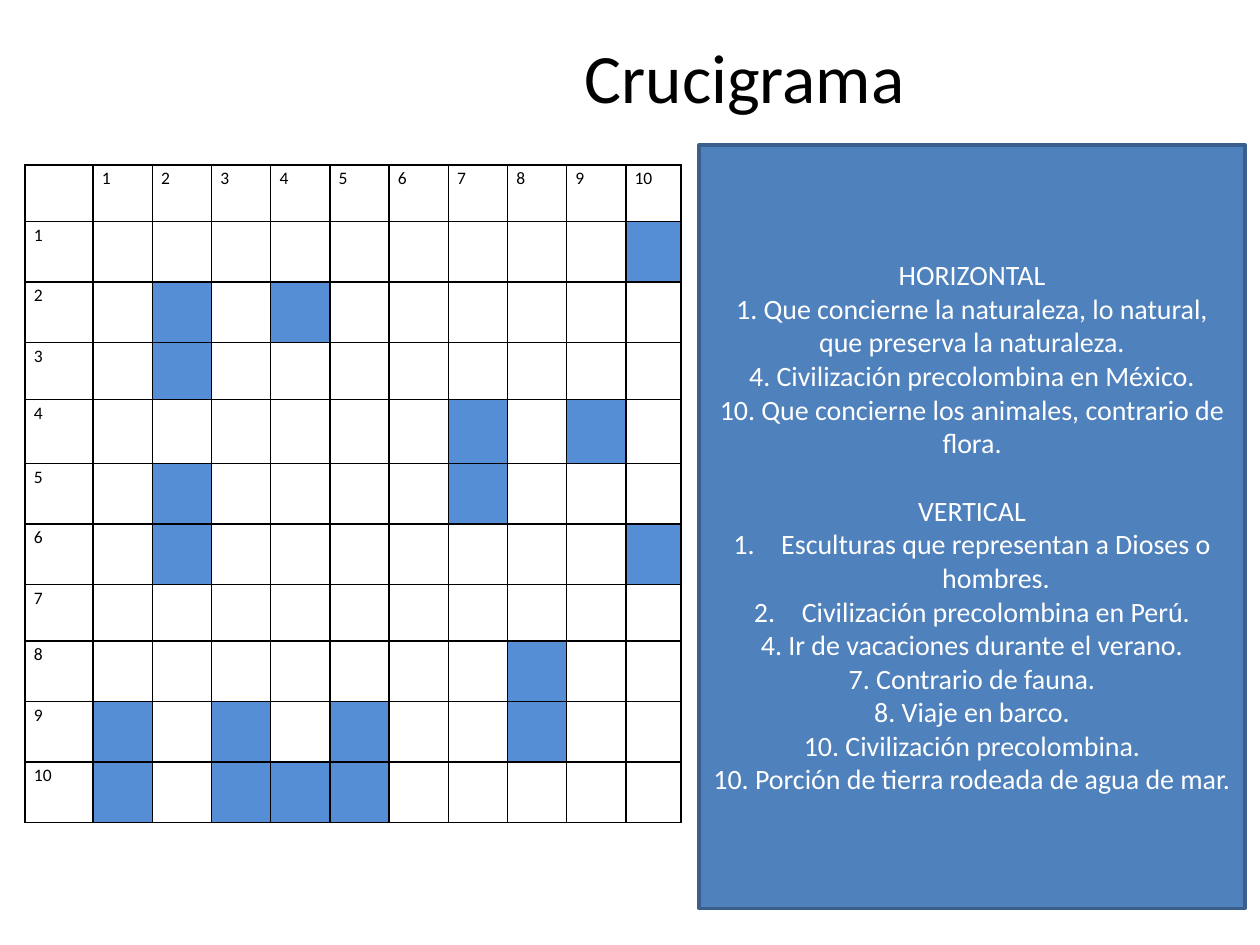
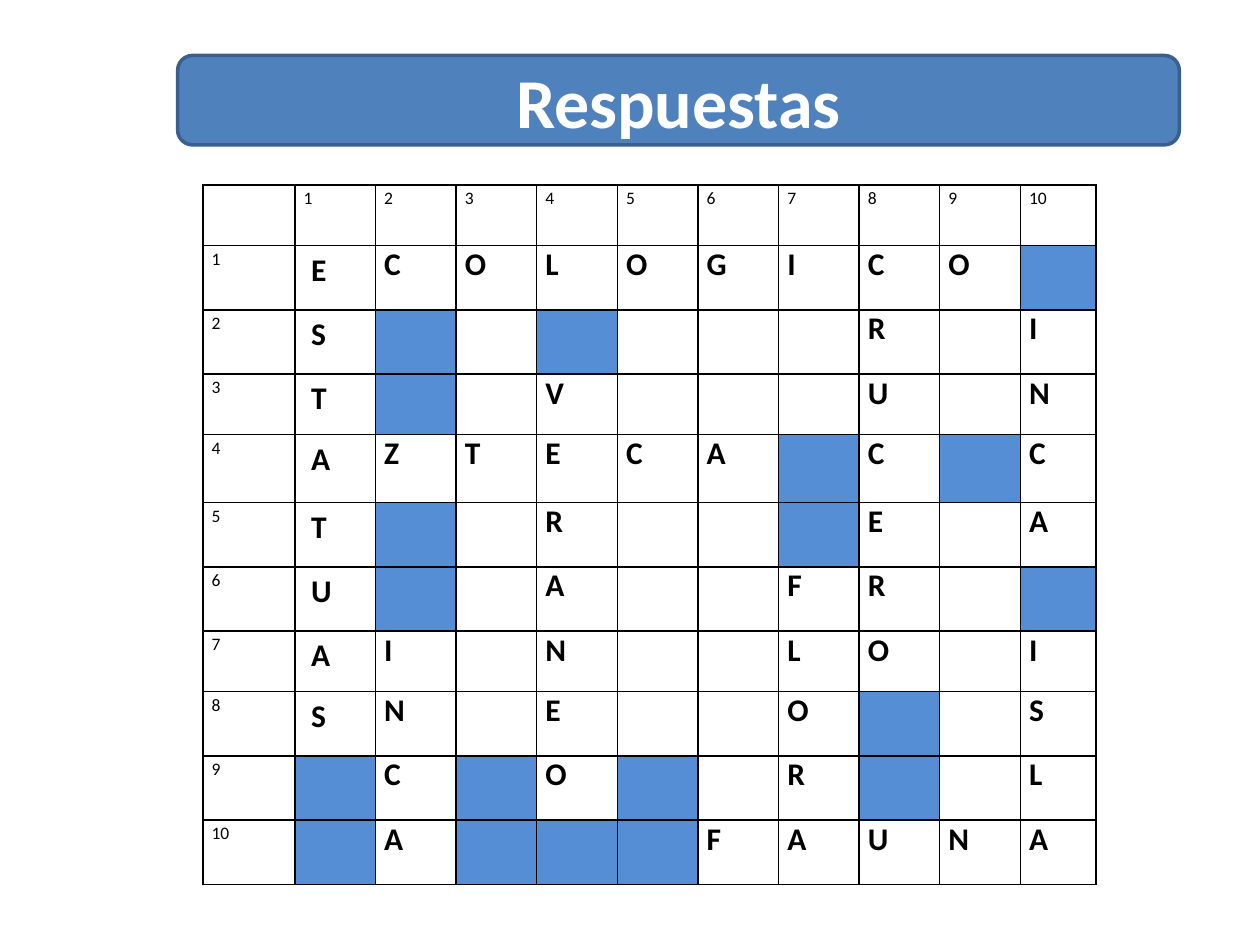
import dataclasses

import lxml.etree
import pptx
import pptx.dml.color
import pptx.enum.shapes
import pptx.enum.text
import pptx.oxml.ns
import pptx.util

Inches = pptx.util.Inches


@dataclasses.dataclass(frozen=True)
class Theme:
    font: str = "Calibri"
    ink: str = "000000"
    paper: str = "FFFFFF"
    panel: str = "4F81BD"
    outline: str = "3A5F8C"
    block: str = "558ED5"
    title_size: float = 39.6
    banner_size: float = 40
    clue_size: float = 16
    letter_size: float = 18
    number_size: float = 10
    outline_width: float = 2
    grid_width: float = 1


BLOCK = "#"
EMPTY = "."
ANSWERS = [
    "ECOLOGICO#",
    "S#.#...R.I",
    "T#.V...U.N",
    "AZTECA#C#C",
    "T#.R..#E.A",
    "U#.A..FR.#",
    "AI.N..LO.I",
    "SN.E..O#.S",
    "#C#O#.R#.L",
    "#A###FAUNA",
]
ROW_OFFSETS = [-0.03, 0, 0, -0.03, 0.03, 0, 0, -0.03, 0, 0, 0]
HORIZONTAL_CLUES = [
    "1. Que concierne la naturaleza, lo natural, que preserva la naturaleza.",
    "4. Civilización precolombina en México.",
    "10. Que concierne los animales, contrario de flora.",
]
NUMBERED_CLUES = [
    "Esculturas que representan a Dioses o hombres.",
    "Civilización precolombina en Perú.",
]
VERTICAL_CLUES = [
    "4. Ir de vacaciones durante el verano.",
    "7. Contrario de fauna.",
    "8. Viaje en barco.",
    "10. Civilización precolombina.",
    "10. Porción de tierra rodeada de agua de mar.",
]


class CrosswordDeck:
    """Hold the theme and the current slide, and draw each kind of element."""

    def __init__(self, theme):
        self.theme = theme
        self.presentation = pptx.Presentation()
        self.presentation.slide_width = Inches(10)
        self.presentation.slide_height = Inches(7.5)
        self.slide = None

    def add_slide(self):
        self.slide = self.presentation.slides.add_slide(self.presentation.slide_layouts[6])

    def color(self, value):
        return pptx.dml.color.RGBColor.from_string(value)

    def fill(self, target, value):
        target.fill.solid()
        target.fill.fore_color.rgb = self.color(value)

    def add_text(self, paragraph, text, size, color, bold=False):
        run = paragraph.add_run()
        run.text = text
        run.font.name = self.theme.font
        run.font.size = pptx.util.Pt(size)
        run.font.bold = bold
        run.font.color.rgb = self.color(color)

    def centered_paragraph(self, frame, first=False):
        paragraph = frame.paragraphs[0] if first else frame.add_paragraph()
        paragraph.alignment = pptx.enum.text.PP_ALIGN.CENTER
        return paragraph

    def prepare_frame(self, shape):
        frame = shape.text_frame
        frame.word_wrap = True
        frame.vertical_anchor = pptx.enum.text.MSO_ANCHOR.MIDDLE
        return frame

    def title(self, text, left, top, width, height):
        box = self.slide.shapes.add_textbox(Inches(left), Inches(top), Inches(width), Inches(height))
        paragraph = self.centered_paragraph(self.prepare_frame(box), first=True)
        self.add_text(paragraph, text, self.theme.title_size, self.theme.ink)

    def panel(self, kind, left, top, width, height):
        shape = self.slide.shapes.add_shape(
            kind, Inches(left), Inches(top), Inches(width), Inches(height))
        shape.shadow.inherit = False
        self.fill(shape, self.theme.panel)
        shape.line.color.rgb = self.color(self.theme.outline)
        shape.line.width = pptx.util.Pt(self.theme.outline_width)
        return self.prepare_frame(shape)

    def banner(self, text, left, top, width, height):
        frame = self.panel(pptx.enum.shapes.MSO_SHAPE.ROUNDED_RECTANGLE, left, top, width, height)
        paragraph = self.centered_paragraph(frame, first=True)
        self.add_text(paragraph, text, self.theme.banner_size, self.theme.paper, bold=True)

    def hang(self, paragraph, numbered):
        properties = paragraph._p.get_or_add_pPr()
        properties.set("marL", str(Inches(0.38)))
        properties.set("indent", str(-Inches(0.38)))
        if numbered:
            font = lxml.etree.SubElement(properties, pptx.oxml.ns.qn("a:buFont"))
            font.set("typeface", "+mj-lt")
            number = lxml.etree.SubElement(properties, pptx.oxml.ns.qn("a:buAutoNum"))
            number.set("type", "arabicPeriod")

    def clues(self, left, top, width, height):
        size, color = self.theme.clue_size, self.theme.paper
        frame = self.panel(pptx.enum.shapes.MSO_SHAPE.RECTANGLE, left, top, width, height)
        self.add_text(self.centered_paragraph(frame, first=True), "HORIZONTAL", size, color)
        for clue in HORIZONTAL_CLUES:
            self.add_text(self.centered_paragraph(frame), clue, size, color)
        heading = self.centered_paragraph(frame)
        heading.space_before = pptx.util.Pt(19.5)
        self.add_text(heading, "VERTICAL", size, color)
        for clue in NUMBERED_CLUES + VERTICAL_CLUES:
            paragraph = self.centered_paragraph(frame)
            self.hang(paragraph, clue in NUMBERED_CLUES)
            self.add_text(paragraph, clue, size, color)

    def border(self, cell):
        properties = cell._tc.get_or_add_tcPr()
        for side in ("lnL", "lnR", "lnT", "lnB"):
            line = lxml.etree.SubElement(properties, pptx.oxml.ns.qn(f"a:{side}"))
            line.set("w", str(pptx.util.Pt(self.theme.grid_width)))
            solid = lxml.etree.SubElement(line, pptx.oxml.ns.qn("a:solidFill"))
            color = lxml.etree.SubElement(solid, pptx.oxml.ns.qn("a:srgbClr"))
            color.set("val", self.theme.ink)

    def style_cell(self, cell, color):
        self.border(cell)
        self.fill(cell, color)
        cell.margin_left = cell.margin_right = Inches(0.07)
        cell.margin_top = cell.margin_bottom = 0
        cell.text_frame.paragraphs[0].font.size = pptx.util.Pt(self.theme.number_size)

    def crossword(self, left, top, column_widths, row_height, solved):
        heights = [row_height + offset for offset in ROW_OFFSETS]
        table = self.slide.shapes.add_table(
            len(heights), len(column_widths), Inches(left), Inches(top),
            Inches(sum(column_widths)), Inches(sum(heights))).table
        table.first_row = table.horz_banding = False
        for column, width in zip(table.columns, column_widths):
            column.width = Inches(width)
        for row, height in zip(table.rows, heights):
            row.height = Inches(height)
        for row in range(len(heights)):
            for column in range(len(column_widths)):
                self.crossword_cell(table.cell(row, column), row, column, solved)

    def crossword_cell(self, cell, row, column, solved):
        is_number = row == 0 or column == 0
        symbol = EMPTY if is_number else ANSWERS[row - 1][column - 1]
        self.style_cell(cell, self.theme.block if symbol == BLOCK else self.theme.paper)
        paragraph = cell.text_frame.paragraphs[0]
        if is_number and row + column > 0:
            paragraph.line_spacing = 1.15
            self.add_text(paragraph, str(row + column), self.theme.number_size, self.theme.ink)
        elif solved and symbol not in (BLOCK, EMPTY):
            if column == 1:
                paragraph.line_spacing = 1.15
                cell.margin_left = Inches(0.13)
            self.add_text(paragraph, symbol, self.theme.letter_size, self.theme.ink, bold=True)


def main():
    deck = CrosswordDeck(Theme())

    deck.add_slide()
    deck.title("Crucigrama", 2.32, 0.3, 7.18, 0.61)
    deck.clues(5.55, 1.15, 4.33, 6.06)
    deck.crossword(0.2, 1.31, [0.54] + [0.47] * 9 + [0.44], 0.48, solved=False)

    deck.add_slide()
    deck.crossword(1.61, 1.47, [0.73] + [0.64] * 9 + [0.6], 0.51, solved=True)
    deck.banner("Respuestas", 1.41, 0.44, 7.95, 0.71)

    deck.presentation.save("out.pptx")


if __name__ == "__main__":
    main()
